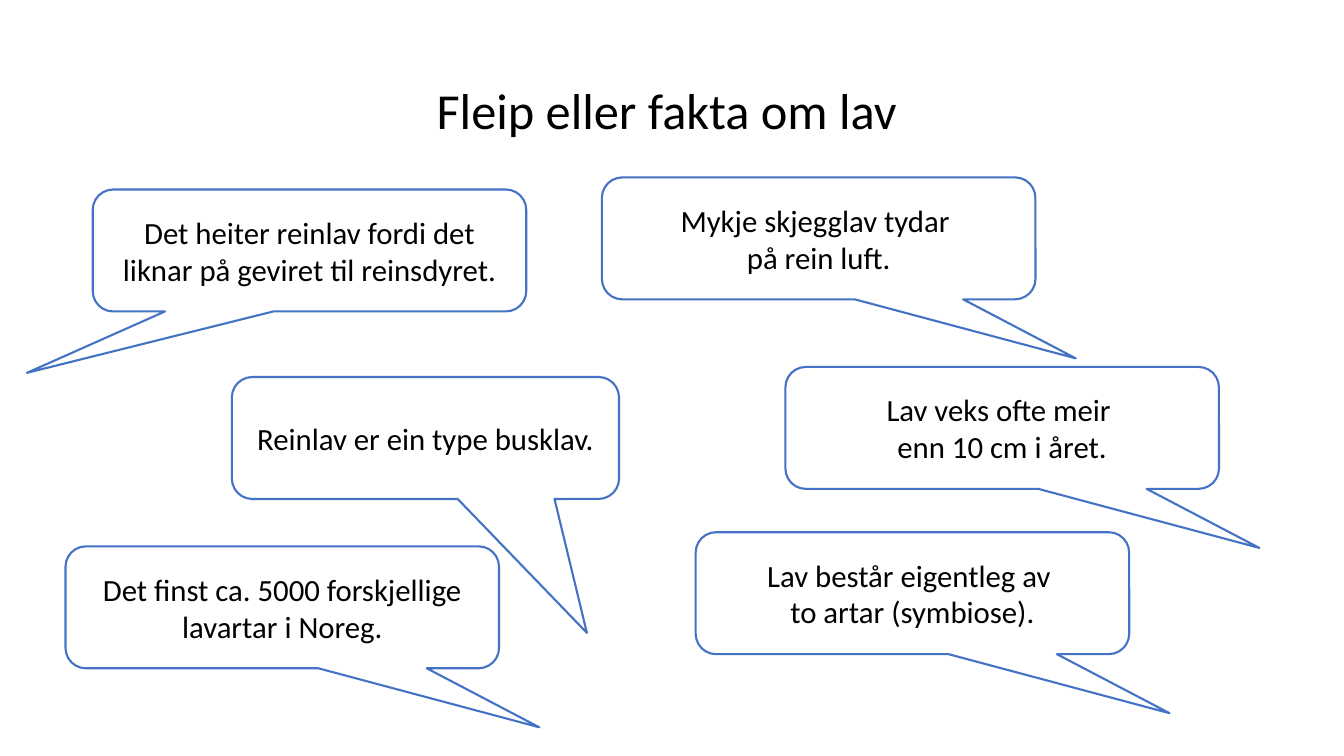
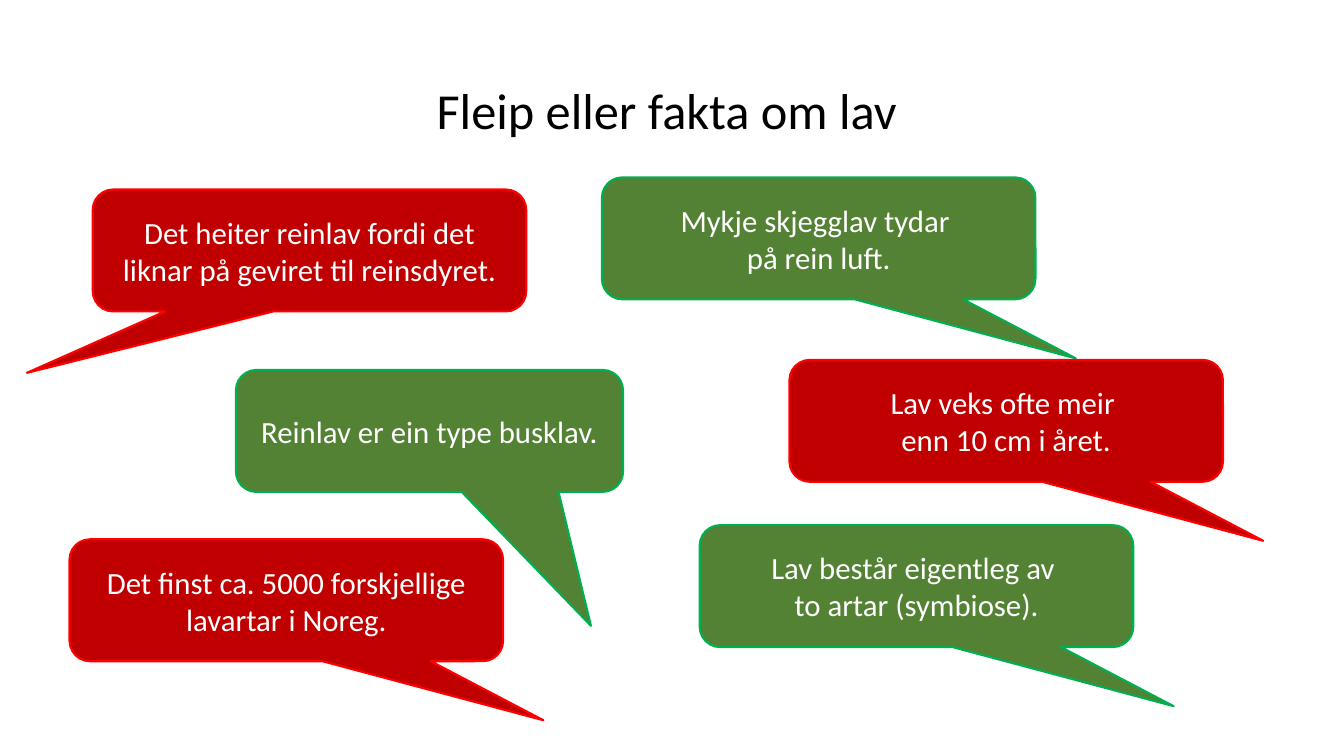
import pptx
import pptx.util
import pptx.dml.color
import pptx.enum.shapes
import pptx.enum.text

Inches, Pt = pptx.util.Inches, pptx.util.Pt
RGB = pptx.dml.color.RGBColor.from_string
CENTER = pptx.enum.text.PP_ALIGN.CENTER
MIDDLE = pptx.enum.text.MSO_ANCHOR.MIDDLE
CALLOUT = pptx.enum.shapes.MSO_SHAPE.ROUNDED_RECTANGULAR_CALLOUT

COLORS = {
    "black": "000000", "white": "FFFFFF", "blue": "4472C4",
    "dark_red": "C00000", "red": "FF0000",
    "dark_green": "548235", "green": "00B050",
}
TITLE_FONT = {"name": "Calibri", "size": Pt(36), "bold": False}
BUBBLE_FONT = {"name": "Calibri", "size": Pt(22)}

# Bubble styles: fill, line, text
STYLES = {
    "open": ("white", "blue", "black"),
    "fleip": ("dark_red", "red", "white"),
    "fakta": ("dark_green", "green", "white"),
}

# Pointer tips, relative to the bubble's centre and size
RIGHT, DOWN, LEFT = (0.593, 0.984), (0.417, 1.598), (-0.652, 1.004)

# Bubbles: left, top, width, pointer, answer, moves on the answer slide, lines
BUBBLES = [
    (0.65, 5.42, 4.3, RIGHT, "fleip", True,
     ["Det finst ca. 5000 forskjellige lavartar i Noreg."]),
    (2.3, 3.74, 3.84, DOWN, "fakta", True,
     ["Reinlav er ein type busklav."]),
    (0.92, 1.88, 4.3, LEFT, "fleip", False,
     ["Det heiter reinlav fordi det liknar på geviret til reinsdyret."]),
    (6.9, 5.28, 4.3, RIGHT, "fakta", True,
     ["Lav består eigentleg av ", "to artar (symbiose)."]),
    (5.97, 1.76, 4.3, RIGHT, "fakta", False,
     ["Mykje skjegglav tydar ", "på rein luft."]),
    (7.79, 3.64, 4.3, RIGHT, "fleip", True,
     ["Lav veks ofte meir ", "enn 10 cm i året."]),
]
BUBBLE_HEIGHT = 1.21
SHIFT_X, SHIFT_Y = 0.04, -0.07


def write(tf, lines, font, color):
    """Fill a text frame with one centred paragraph, broken into lines."""
    tf.word_wrap = True
    tf.vertical_anchor = MIDDLE
    p = tf.paragraphs[0]
    p.alignment = CENTER
    for i, line in enumerate(lines):
        if i:
            p.add_line_break()
        r = p.add_run()
        r.text = line
        for name, value in font.items():
            setattr(r.font, name, value)
        r.font.color.rgb = RGB(COLORS[color])
    return p


prs = pptx.Presentation()
prs.slide_width, prs.slide_height = Inches(13.33), Inches(7.5)

# Question slide, then answer slide
for show_answers in (False, True):
    s = prs.slides.add_slide(prs.slide_layouts[5])

    # Title
    title = s.shapes.title
    title.left, title.top = Inches(0.92), Inches(0.4)
    title.width, title.height = Inches(11.5), Inches(1.45)
    p = write(title.text_frame, ["Fleip eller fakta om lav "], TITLE_FONT, "black")
    p.line_spacing = 0.9

    # Speech bubbles
    for left, top, width, pointer, answer, moves, lines in BUBBLES:
        if show_answers and moves:
            left, top = left + SHIFT_X, top + SHIFT_Y
        fill, line, text = STYLES[answer if show_answers else "open"]
        sp = s.shapes.add_shape(CALLOUT, Inches(left), Inches(top),
                                Inches(width), Inches(BUBBLE_HEIGHT))
        sp.shadow.inherit = False
        for i, value in enumerate((*pointer, 0.167)):
            sp.adjustments[i] = value
        sp.fill.solid()
        sp.fill.fore_color.rgb = RGB(COLORS[fill])
        sp.line.color.rgb = RGB(COLORS[line])
        sp.line.width = Pt(1.5)
        write(sp.text_frame, lines, BUBBLE_FONT, text)

prs.save("out.pptx")
